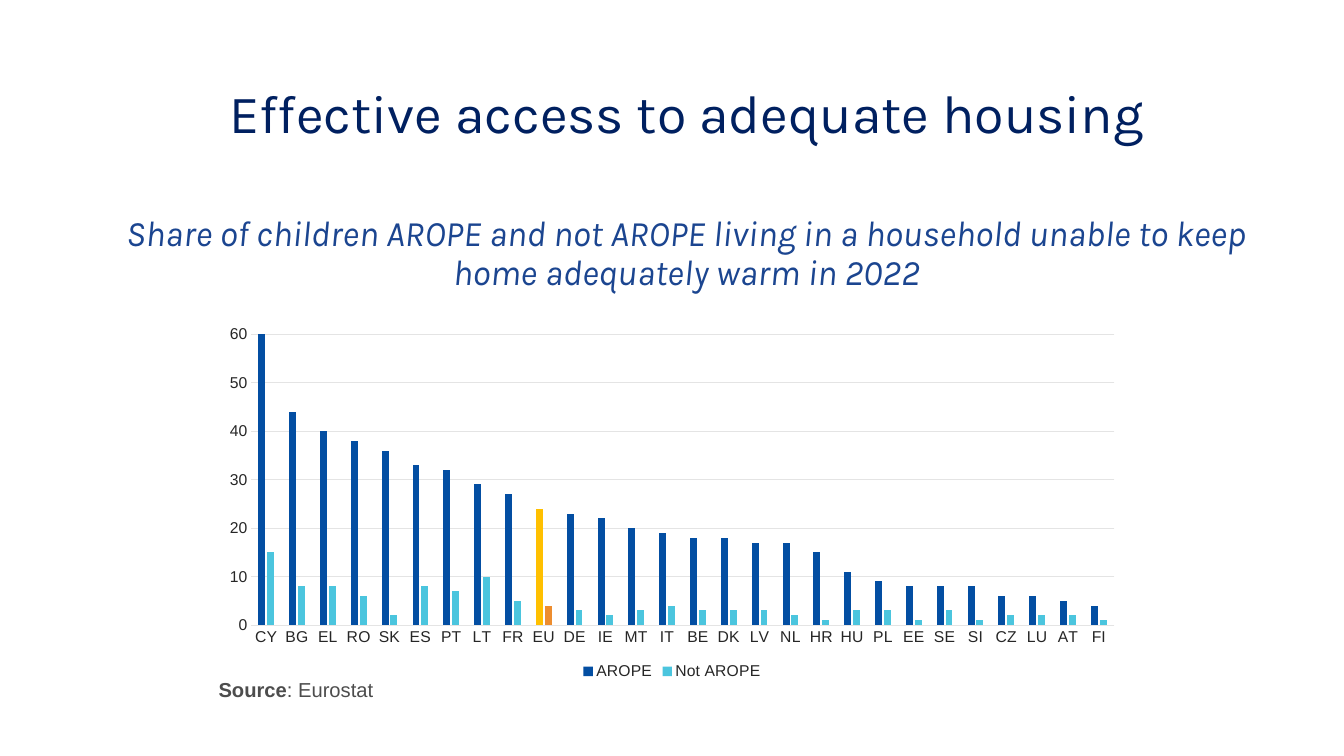
import pptx
import pptx.chart.data
import pptx.dml.color
import pptx.enum.chart
import pptx.enum.text
import pptx.util

COLOURS = {
    "title": "002060", "subtitle": "1B4590", "source": "4D4D4D",
    "label": "262626", "grid": "E4E4E4",
    "arope": "034EA2", "arope_eu": "FFC000",
    "other": "4BC5DE", "other_eu": "ED8D2F",
}
COUNTRIES = ("CY BG EL RO SK ES PT LT FR EU DE IE MT IT "
             "BE DK LV NL HR HU PL EE SE SI CZ LU AT FI").split()
# Series name, bar colour, EU bar colour, values
SERIES = [
    ("AROPE", "arope", "arope_eu",
     [60, 44, 40, 38, 36, 33, 32, 29, 27, 24, 23, 22, 20, 19,
      18, 18, 17, 17, 15, 11, 9, 8, 8, 8, 6, 6, 5, 4]),
    ("Not AROPE", "other", "other_eu",
     [15, 8, 8, 6, 2, 8, 7, 10, 5, 4, 3, 2, 3, 4,
      3, 3, 3, 2, 1, 3, 3, 1, 3, 1, 2, 2, 2, 1]),
]


def rgb(name):
    return pptx.dml.color.RGBColor.from_string(COLOURS[name])


class Board:
    """Style and current slide; places are percentages of the slide's size."""

    def __init__(self, width, height):
        self.deck = pptx.Presentation()
        self.deck.slide_width = pptx.util.Inches(width)
        self.deck.slide_height = pptx.util.Inches(height)
        self.page = self.deck.slides.add_slide(self.deck.slide_layouts[6])

    def place(self, left, top, width, height):
        across, down = self.deck.slide_width, self.deck.slide_height
        return [round(share * size / 100) for share, size in
                ((left, across), (top, down), (width, across), (height, down))]

    def font(self, font, size, colour, name="Arial", bold=False, italic=False):
        font.size = pptx.util.Pt(size)
        font.name = name
        font.bold = bold
        font.italic = italic
        font.color.rgb = rgb(colour)

    def text(self, area):
        box = self.page.shapes.add_textbox(*self.place(*area))
        box.text_frame.word_wrap = True
        return box.text_frame

    def heading(self, area, title, subtitle):
        frame = self.text(area)
        frame.text = f"{title}\n{subtitle}"
        styles = [(48, "title", False), (32, "subtitle", True)]
        for para, (size, colour, italic) in zip(frame.paragraphs, styles):
            para.alignment = pptx.enum.text.PP_ALIGN.CENTER
            para.line_spacing = 0.9
            self.font(para.runs[0].font, size, colour, "Karla", italic=italic)
        frame.paragraphs[1].space_before = pptx.util.Pt(63)

    def source(self, area, label, detail):
        frame = self.text(area)
        frame.auto_size = pptx.enum.text.MSO_AUTO_SIZE.SHAPE_TO_FIT_TEXT
        para = frame.paragraphs[0]
        for words, bold in ((label, True), (detail, False)):
            span = para.add_run()
            span.text = words
            self.font(span.font, 18, "source", bold=bold)

    def line(self, line):
        line.color.rgb = rgb("grid")
        line.width = pptx.util.Pt(0.75)

    def columns(self, area, categories, series, highlight):
        data = pptx.chart.data.CategoryChartData(number_format="0")
        data.categories = categories
        for name, _, _, values in series:
            data.add_series(name, values)
        chart = self.page.shapes.add_chart(
            pptx.enum.chart.XL_CHART_TYPE.COLUMN_CLUSTERED,
            *self.place(*area), data).chart
        chart.has_title = False
        self.font(chart.font, 10, "source")

        # Bars, with one category picked out
        plot = chart.plots[0]
        plot.vary_by_categories = False
        plot.gap_width, plot.overlap = 219, -27
        for bars, (_, colour, accent, _) in zip(plot.series, series):
            bars.invert_if_negative = False
            point = bars.points[categories.index(highlight)]
            for part, shade in ((bars, colour), (point, accent)):
                part.format.fill.solid()
                part.format.fill.fore_color.rgb = rgb(shade)

        # Axes
        for axis in (chart.category_axis, chart.value_axis):
            axis.major_tick_mark = pptx.enum.chart.XL_TICK_MARK.NONE
            axis.minor_tick_mark = pptx.enum.chart.XL_TICK_MARK.NONE
            self.font(axis.tick_labels.font, 14, "label")
        self.line(chart.category_axis.format.line)
        scale = chart.value_axis
        scale.minimum_scale, scale.maximum_scale, scale.major_unit = 0, 65, 10
        scale.tick_labels.number_format = "0"
        scale.tick_labels.number_format_is_linked = False
        scale.format.line.fill.background()
        scale.has_major_gridlines = True
        self.line(scale.major_gridlines.format.line)

        # Legend
        chart.has_legend = True
        chart.legend.position = pptx.enum.chart.XL_LEGEND_POSITION.BOTTOM
        chart.legend.include_in_layout = False
        self.font(chart.legend.font, 14, "label")


def main():
    board = Board(16.66, 9.37)
    board.heading((7.98, 11, 86.25, 11.42),
                  "Effective access to adequate housing",
                  "Share of children AROPE and not AROPE living in a household "
                  "unable to keep home adequately warm in 2022")
    board.columns((15.73, 40, 68.55, 50.4), COUNTRIES, SERIES, "EU")
    board.source((15.67, 89.1, 63.4, 4.3), "Source", ": Eurostat")
    board.deck.save("out.pptx")


if __name__ == "__main__":
    main()
